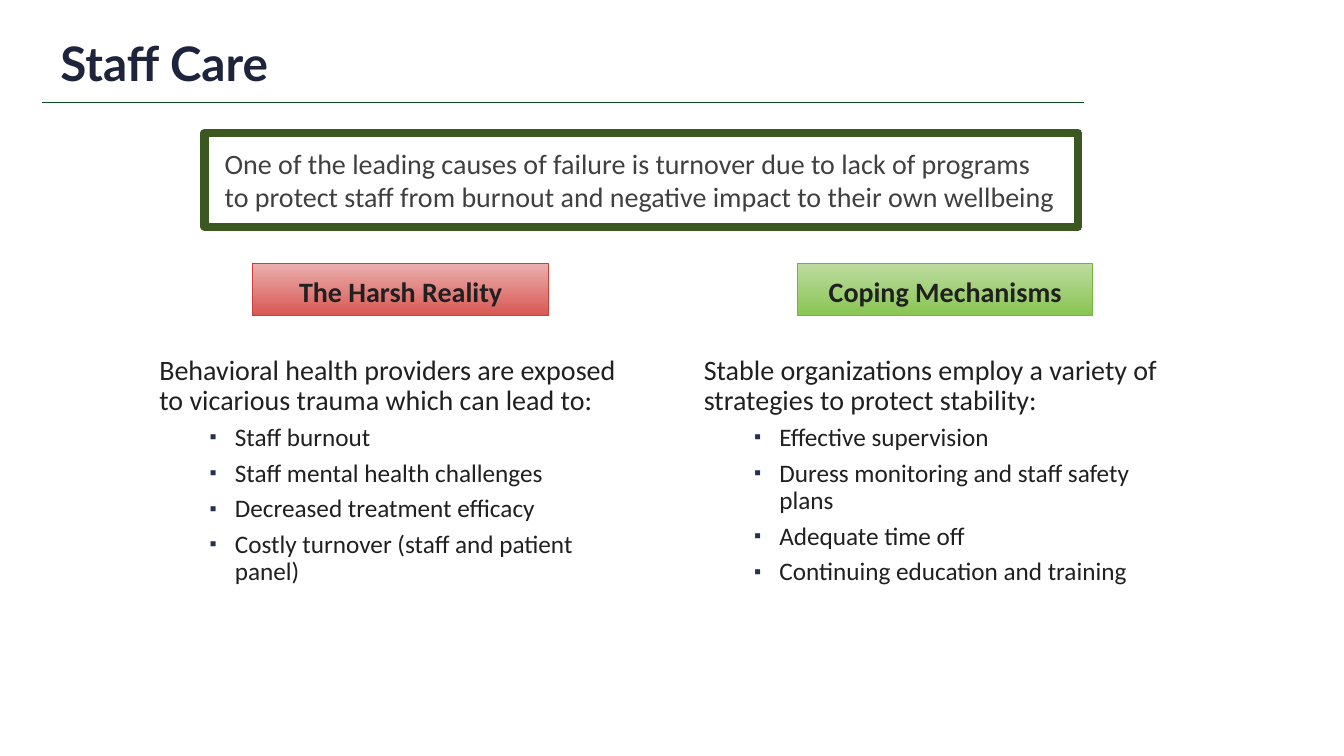
from pptx import Presentation
from pptx.dml.color import RGBColor
from pptx.enum.shapes import MSO_CONNECTOR, MSO_SHAPE
from pptx.enum.text import MSO_ANCHOR, MSO_AUTO_SIZE, PP_ALIGN
from pptx.oxml.ns import qn
from pptx.util import Inches, Pt
from lxml.etree import SubElement

# Content
TITLE = "Staff Care"
MESSAGE = ("One of the leading causes of failure is turnover due to lack of programs "
           "to protect staff from burnout and negative impact to their own wellbeing")
COLUMNS = [
    {"heading": "The Harsh Reality", "color": "red",
     "lead": "Behavioral health providers are exposed to vicarious trauma which can lead to:",
     "points": ["Staff burnout", "Staff mental health challenges",
                "Decreased treatment efficacy",
                "Costly turnover (staff and patient panel)"]},
    {"heading": "Coping Mechanisms", "color": "green",
     "lead": "Stable organizations employ a variety of strategies to protect stability:",
     "points": ["Effective supervision", "Duress monitoring and staff safety plans",
                "Adequate time off", "Continuing education and training"]},
]

# Theme: text formats, line colours and (gradient top, gradient bottom, outline)
THEME = {
    "title": {"name": "Lato", "size": 34, "bold": True, "color": "1D243C"},
    "message": {"name": "Calibri", "size": 20, "bold": False, "color": "404040"},
    "heading": {"name": "Calibri", "size": 20, "bold": True, "color": "202020"},
    "lead": {"name": "Calibri", "size": 20, "bold": False, "color": "202020"},
    "point": {"name": "Calibri", "size": 18, "bold": False, "color": "202020"},
    "bullet": "263050",
    "rule": "0A4E1F",
    "frame": "3C5821",
    "red": ("EAB1AF", "D95753", "CB3E3A"),
    "green": ("BDDCA1", "89C552", "77B142"),
}

# Layout in inches
COLUMN_LEFT, COLUMN_STEP = 1.47, 5.4
COLUMN_TOP, COLUMN_WIDTH, COLUMN_HEIGHT = 2.71, 5, 3.88
LABEL_TOP, LABEL_WIDTH, LABEL_HEIGHT = 2.61, 2.93, 0.52


def place(shape, left, top, width, height):
    shape.left, shape.top = Inches(left), Inches(top)
    shape.width, shape.height = Inches(width), Inches(height)


def write(para, text, style):
    span = para.add_run()
    span.text = text
    for name, value in THEME[style].items():
        if name == "color":
            span.font.color.rgb = RGBColor.from_string(value)
        else:
            setattr(span.font, name, Pt(value) if name == "size" else value)


def set_line(shape, color, width):
    shape.line.color.rgb = RGBColor.from_string(color)
    shape.line.width = Pt(width)


def add_rectangle(left, top, width, height):
    box = page.shapes.add_shape(MSO_SHAPE.RECTANGLE, Inches(left), Inches(top),
                                Inches(width), Inches(height))
    box.shadow.inherit = False
    return box


def set_bullet(para, bulleted):
    properties = para._p.get_or_add_pPr()
    properties.set("marL", str(Inches(0.76 if bulleted else 0.01)))
    properties.set("indent", str(Inches(-0.25 if bulleted else 0)))
    if not bulleted:
        SubElement(properties, qn("a:buNone"))
        return
    color = SubElement(properties, qn("a:buClr"))
    SubElement(color, qn("a:srgbClr"), val=THEME["bullet"])
    SubElement(properties, qn("a:buSzPct"), val="80000")
    SubElement(properties, qn("a:buChar"), char="▪")


def fill_column(body, column):
    lines = [(column["heading"], "heading"), (column["lead"], "lead")]
    lines += [(point, "point") for point in column["points"]]
    frame = body.text_frame
    frame.auto_size = MSO_AUTO_SIZE.NONE
    for index, (text, style) in enumerate(lines):
        para = frame.add_paragraph() if index else frame.paragraphs[0]
        para.level = 1 if style == "point" else 0
        set_bullet(para, style == "point")
        formats = {
            "alignment": PP_ALIGN.CENTER if style == "heading" else PP_ALIGN.LEFT,
            "line_spacing": 0.9,
            "space_before": Pt(0),
            "space_after": Pt(34 if style == "heading" else 6),
        }
        for name, value in formats.items():
            setattr(para, name, value)
        write(para, text, style)


deck = Presentation()
deck.slide_width, deck.slide_height = Inches(13.33), Inches(7.5)
page = deck.slides.add_slide(deck.slide_layouts[3])
title, *bodies = page.placeholders

# Title and rule
place(title, 0.5, 0.3, 10.4, 0.66)
title.text_frame.auto_size = MSO_AUTO_SIZE.NONE
title.text_frame.vertical_anchor = MSO_ANCHOR.BOTTOM
title_para = title.text_frame.paragraphs[0]
title_para.alignment = PP_ALIGN.LEFT
title_para.line_spacing = 0.9
write(title_para, TITLE, "title")

rule = page.shapes.add_connector(MSO_CONNECTOR.STRAIGHT, Inches(0.42), Inches(1.02),
                                 Inches(10.75), Inches(1.02))
set_line(rule, THEME["rule"], 1)
SubElement(rule._element.spPr, qn("a:effectLst"))

# Columns: gradient label behind the heading of each body
for index, (body, column) in enumerate(zip(bodies, COLUMNS)):
    left = COLUMN_LEFT + index * COLUMN_STEP
    label = add_rectangle(left + (COLUMN_WIDTH - LABEL_WIDTH) / 2, LABEL_TOP,
                          LABEL_WIDTH, LABEL_HEIGHT)
    *shades, outline = THEME[column["color"]]
    label.fill.gradient()
    label.fill.gradient_angle = 270
    for stop, shade in zip(label.fill.gradient_stops, shades):
        stop.color.rgb = RGBColor.from_string(shade)
    set_line(label, outline, 0.5)
    page.shapes._spTree.insert(2, label._element)
    place(body, left, COLUMN_TOP, COLUMN_WIDTH, COLUMN_HEIGHT)
    fill_column(body, column)

# Framed message
message = page.shapes.add_textbox(Inches(2.13), Inches(1.4), Inches(8.45), Inches(0.77))
message.text_frame.word_wrap = True
write(message.text_frame.paragraphs[0], MESSAGE, "message")
border = add_rectangle(2.03, 1.32, 8.66, 0.93)
border.fill.background()
set_line(border, THEME["frame"], 6)

deck.save("out.pptx")
